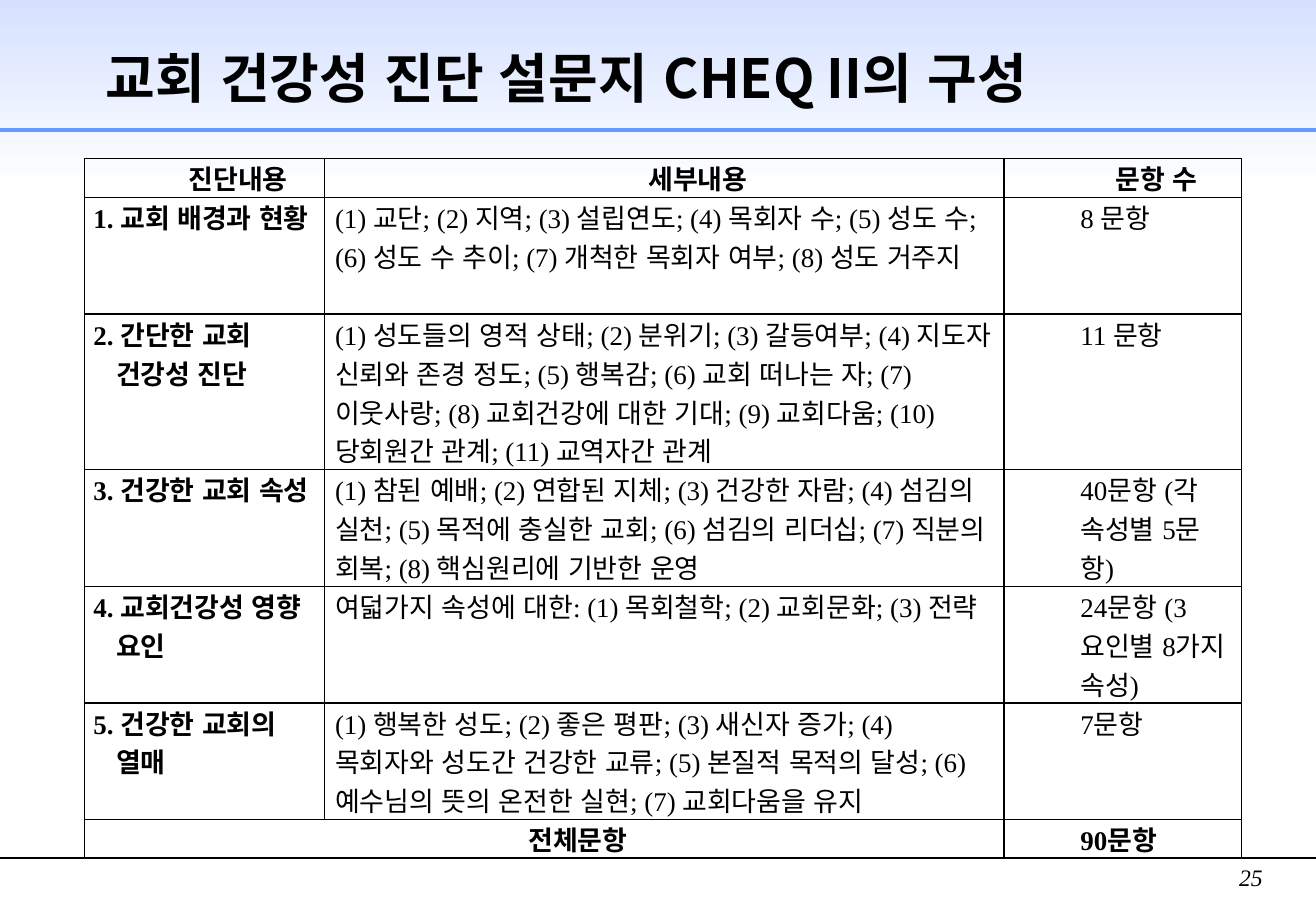
from lxml.etree import SubElement as Sub
from pptx import Presentation
from pptx.dml.color import RGBColor
from pptx.enum.lang import MSO_LANGUAGE_ID as Lang
from pptx.enum.shapes import MSO_CONNECTOR as Link, MSO_SHAPE as Kind
from pptx.enum.text import MSO_ANCHOR as Anchor, PP_ALIGN as Align
from pptx.oxml import parse_xml
from pptx.oxml.ns import nsdecls, qn
from pptx.util import Pt

BLACK = RGBColor(0, 0, 0)
WHITE = RGBColor(255, 255, 255)
PALE = RGBColor(0xD5, 0xE1, 0xFF)
BLUE = RGBColor(0x66, 0x99, 0xFF)
SERIF, SANS = "Times New Roman", "Noto Sans CJK KR"
WIDTH, HEIGHT = 780, 540
COLS = [142.5, 402.5, 141]
LINES = [1, 3, 4, 3, 3, 3, 1]
LINE = 23.05
HEAD = ["진단내용", "세부내용", "문항 수"]
BODY = [
    ["1. 교회 배경과 현황",
     "(1) 교단; (2) 지역; (3) 설립연도; (4) 목회자 수; (5) 성도 수; "
     "(6) 성도 수 추이; (7) 개척한 목회자 여부; (8) 성도 거주지",
     "8 문항"],
    ["2. 간단한 교회 건강성 진단",
     "(1) 성도들의 영적 상태; (2) 분위기; (3) 갈등여부; "
     "(4) 지도자 신뢰와 존경 정도; (5) 행복감; (6) 교회 떠나는 자; "
     "(7) 이웃사랑; (8) 교회건강에 대한 기대; (9) 교회다움; "
     "(10) 당회원간 관계; (11) 교역자간 관계",
     "11 문항"],
    ["3. 건강한 교회 속성",
     "(1) 참된 예배; (2) 연합된 지체; (3) 건강한 자람; (4) 섬김의 실천; "
     "(5) 목적에 충실한 교회; (6) 섬김의 리더십; (7) 직분의 회복; "
     "(8) 핵심원리에 기반한 운영",
     "40문항 (각 속성별 5문항)"],
    ["4. 교회건강성 영향 요인",
     "여덟가지 속성에 대한: (1) 목회철학; (2) 교회문화; (3) 전략",
     "24문항 (3 요인별 8가지 속성)"],
    ["5. 건강한 교회의 열매",
     "(1) 행복한 성도; (2) 좋은 평판; (3) 새신자 증가; "
     "(4) 목회자와 성도간 건강한 교류; (5) 본질적 목적의 달성; "
     "(6) 예수님의 뜻의 온전한 실현; (7) 교회다움을 유지",
     "7문항"],
]
TOTAL = ["전체문항", "", "90문항"]


def write(frame, text, size=16, face=SERIF, bold=False, italic=False,
          align=Align.LEFT, left=0, hang=0):
    """Fill a text frame; left and hang are the paragraph's indents."""
    para = frame.paragraphs[0]
    para.alignment = align
    props = para._p.get_or_add_pPr()
    props.set("marL", str(Pt(left)))
    props.set("indent", str(Pt(-hang)))
    run = para.add_run()
    run.text = text
    font = run.font
    font.size, font.name = Pt(size), face
    font.bold, font.italic = bold, italic
    font.color.rgb = BLACK
    font.language_id = Lang.KOREAN
    Sub(run._r.get_or_add_rPr(), qn("a:ea"), typeface=SANS)


def rule(slide, top, color, weight):
    line = slide.shapes.add_connector(
        Link.STRAIGHT, 0, Pt(top), Pt(WIDTH), Pt(top))
    line.line.color.rgb = color
    line.line.width = Pt(weight)
    Sub(line.element.spPr, qn("a:effectLst"))


def frame_page(slide):
    """Draw the shaded band and the two rules behind the title."""
    band = slide.shapes.add_shape(Kind.RECTANGLE, 0, 0, Pt(WIDTH), Pt(114))
    band.shadow.inherit = False
    band.line.fill.background()
    band.fill.gradient()
    band.fill.gradient_angle = 270
    for stop, color, pos in zip(band.fill.gradient_stops, (PALE, WHITE), (0, 1)):
        stop.color.rgb = color
        stop.position = pos
    rule(slide, 77, BLUE, 2.25)
    rule(slide, 508.5, BLACK, 1.5)


def place(shape, left, top, width, height):
    shape.left, shape.top = Pt(left), Pt(top)
    shape.width, shape.height = Pt(width), Pt(height)


def add_title(slide, text, box):
    title = slide.shapes.title
    place(title, *box)
    title.text_frame.vertical_anchor = Anchor.MIDDLE
    title.text_frame.word_wrap = True
    write(title.text_frame, text, size=32, face=SANS, bold=True)
    slide.shapes.element.append(title.element)


def add_number(slide, text, box):
    note = slide.shapes.add_textbox(*map(Pt, box))
    note.text_frame.word_wrap = True
    write(note.text_frame, text, size=14, italic=True, align=Align.RIGHT)


def style(cell):
    """Clear the cell's fill, set its margins and rule its four sides."""
    cell.fill.background()
    cell.margin_left = cell.margin_right = Pt(5.4)
    cell.margin_top = cell.margin_bottom = 0
    props = cell._tc.get_or_add_tcPr()
    for spot, side in enumerate("LRTB"):
        props.insert(spot, parse_xml(
            f'<a:ln{side} {nsdecls("a")} w="{Pt(1)}"><a:solidFill>'
            f'<a:srgbClr val="{BLACK}"/></a:solidFill></a:ln{side}>'))


def add_grid(slide, left, top):
    rows = [HEAD, *BODY, TOTAL]
    last = len(rows) - 1
    grid = slide.shapes.add_table(
        len(rows), len(COLS), Pt(left), Pt(top),
        Pt(sum(COLS)), Pt(LINE * sum(LINES))).table
    grid.first_row = grid.horz_banding = False
    for col, width in zip(grid.columns, COLS):
        col.width = Pt(width)
    for row, count in zip(grid.rows, LINES):
        row.height = Pt(LINE * count)
    grid.cell(last, 0).merge(grid.cell(last, 1))
    mid = dict(align=Align.CENTER, left=40, bold=True)
    topic = dict(left=13.5, hang=13.5, bold=True)
    for r, texts in enumerate(rows):
        for c, text in enumerate(texts):
            cell = grid.cell(r, c)
            style(cell)
            if not text:
                continue
            if r == 0 or (r == last and c == 0):
                form = mid
            else:
                form = (topic, dict(left=0.7), dict(left=40, bold=r == last))[c]
            write(cell.text_frame, text, **form)


def main():
    deck = Presentation()
    deck.slide_width, deck.slide_height = Pt(WIDTH), Pt(HEIGHT)
    slide = deck.slides.add_slide(deck.slide_layouts.get_by_name("Title Only"))
    frame_page(slide)
    add_title(slide, "교회 건강성 진단 설문지 CHEQ II의 구성", (55.5, 15, 670, 61))
    add_number(slide, "25", (705, 508, 50.5, 32))
    add_grid(slide, 50, 94)
    deck.save("out.pptx")


if __name__ == "__main__":
    main()
